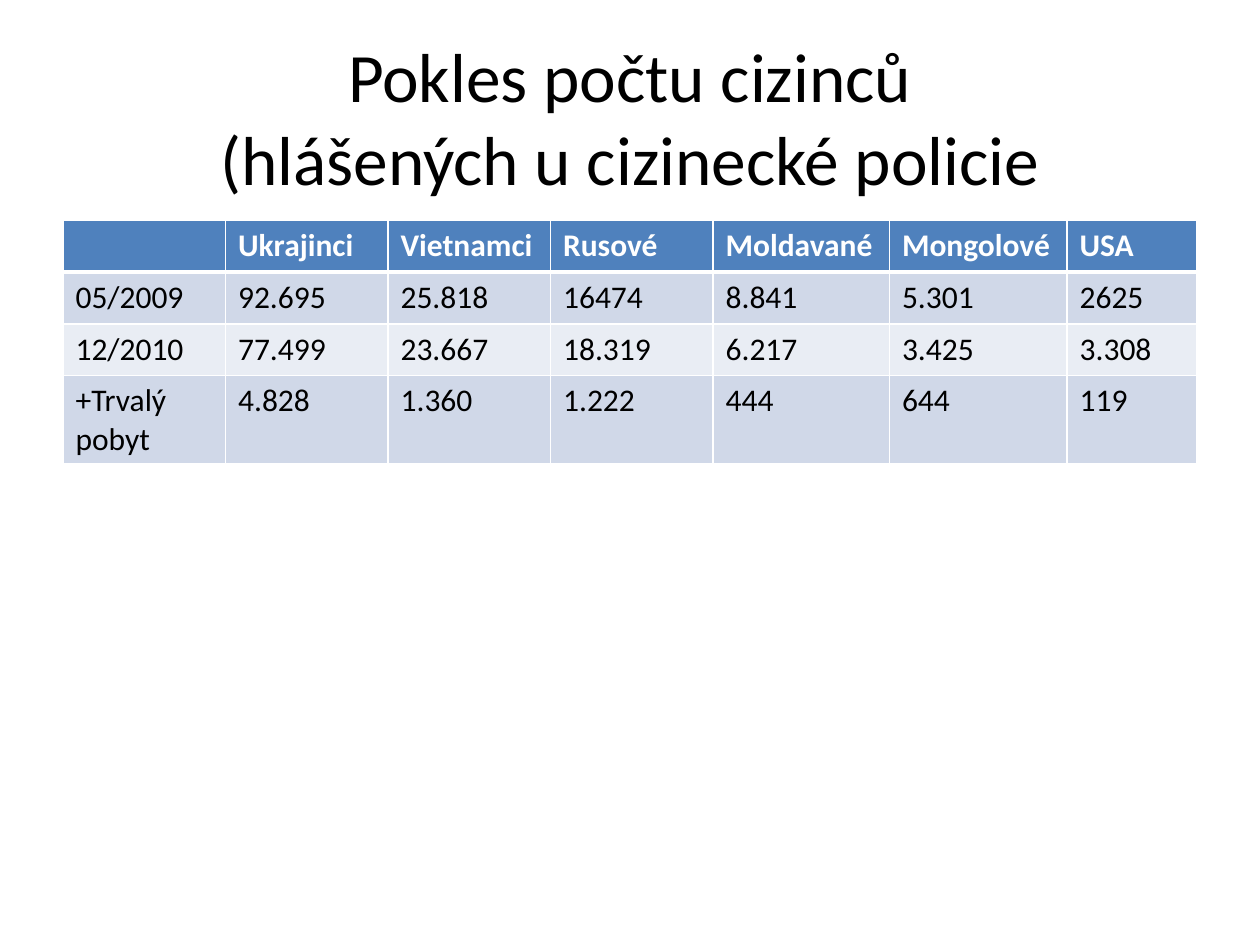
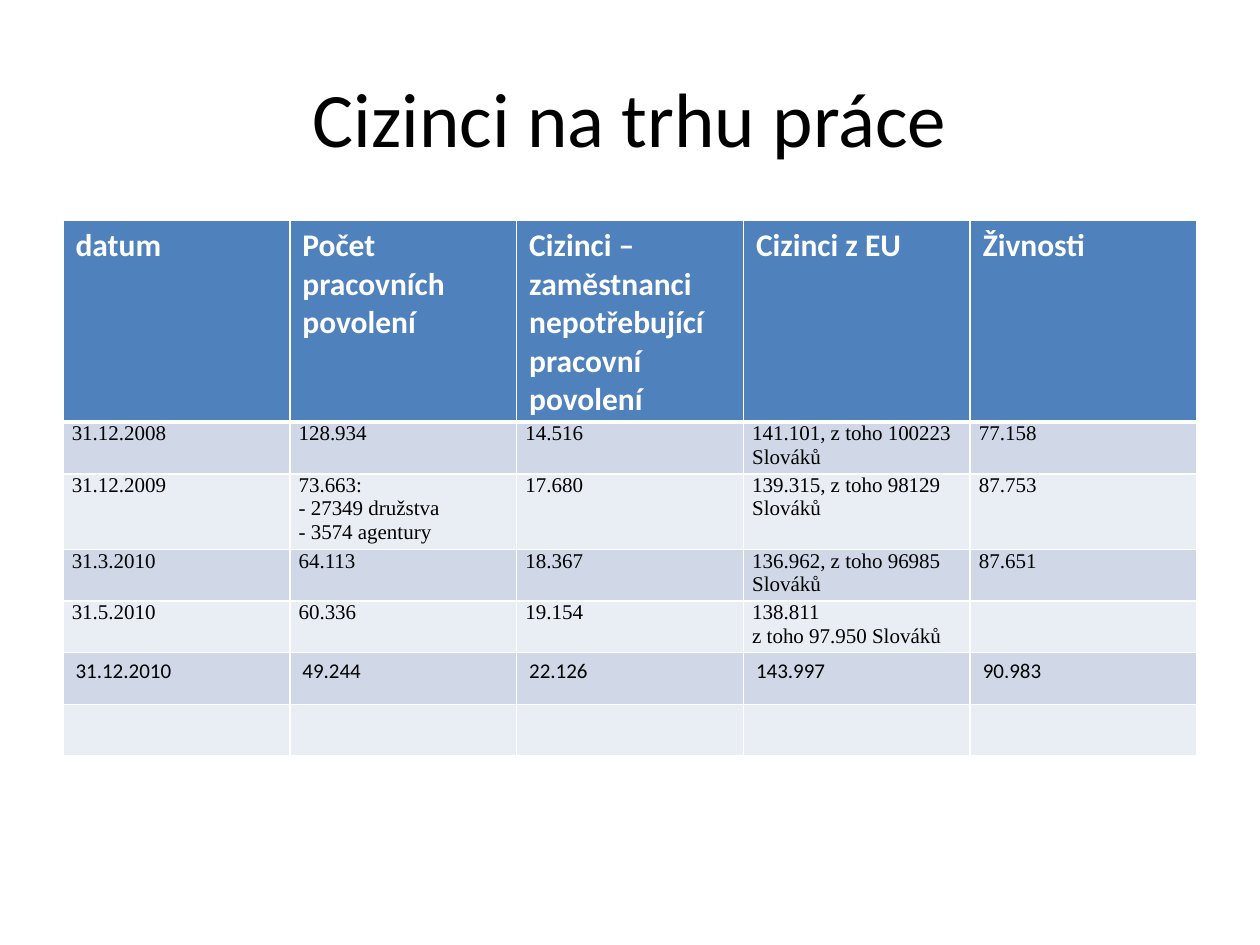
from lxml import etree
from pptx import Presentation
from pptx import util as u
from pptx.dml.color import RGBColor
from pptx.enum import text
from pptx.oxml import ns

BLACK = RGBColor(0x00, 0x00, 0x00)
WHITE = RGBColor(0xFF, 0xFF, 0xFF)
BLUE = RGBColor(0x4F, 0x81, 0xBD)
BANDS = (RGBColor(0xD0, 0xD8, 0xE8), RGBColor(0xE9, 0xED, 0xF4))

TITLE = (0.5, 0.3, 9, 1.25)
GRID = (0.5, 1.75)
ROW = 0.41

HEAD = dict(name="Calibri", size=u.Pt(18), bold=True)
BODY = dict(name="Calibri", size=u.Pt(18), bold=False)
SMALL = dict(BODY, size=u.Pt(12))
SERIF = dict(SMALL, name="Times New Roman")
TIGHT = dict(margin_left=u.Inches(0.07), margin_right=u.Inches(0.07),
             margin_top=0, margin_bottom=0)

POLICE = [
    ["", "Ukrajinci", "Vietnamci", "Rusové", "Moldavané", "Mongolové", "USA"],
    ["05/2009", "92.695", "25.818", "16474", "8.841", "5.301", "2625"],
    ["12/2010", "77.499", "23.667", "18.319", "6.217", "3.425", "3.308"],
    ["+Trvalý pobyt", "4.828", "1.360", "1.222", "444", "644", "119"],
]
LABOUR = [
    ["datum", "Počet pracovních povolení",
     "Cizinci – zaměstnanci nepotřebující pracovní povolení",
     "Cizinci z EU", "Živnosti"],
    ["31.12.2008", "128.934", "14.516", "141.101, z toho 100223 Slováků", "77.158"],
    ["31.12.2009", "73.663:\n- 27349 družstva\n- 3574 agentury", "17.680",
     "139.315, z toho 98129 Slováků", "87.753"],
    ["31.3.2010", "64.113", "18.367", "136.962, z toho 96985 Slováků", "87.651"],
    ["31.5.2010", "60.336", "19.154", "138.811\nz toho 97.950 Slováků", ""],
    ["31.12.2010", "49.244", "22.126", "143.997", "90.983"],
    [""] * 5,
]


def apply(item, values):
    for name, value in values.items():
        setattr(item, name, value)


def style(par, font, color):
    for run in par.runs:
        apply(run.font, font)
        run.font.color.rgb = color


def add_title(slide, box, words, size):
    frame = slide.shapes.add_textbox(*map(u.Inches, box)).text_frame
    apply(frame, dict(word_wrap=True, vertical_anchor=text.MSO_ANCHOR.MIDDLE))
    par = frame.paragraphs[0]
    par.text = words
    par.alignment = text.PP_ALIGN.CENTER
    style(par, dict(name="Calibri", size=u.Pt(size)), BLACK)


def add_edges(cell, row):
    """Draw white cell borders, with a thick rule below the header row."""
    widths = dict(L=1, R=1, T=3 if row == 1 else 1, B=3 if row == 0 else 1)
    props = cell._tc.get_or_add_tcPr()
    for side, width in widths.items():
        line = etree.SubElement(props, ns.qn(f"a:ln{side}"), w=str(u.Pt(width)))
        fill = etree.SubElement(line, ns.qn("a:solidFill"))
        etree.SubElement(fill, ns.qn("a:srgbClr"), val=str(WHITE))


def fill_cell(cell, row, words, font, color, back):
    add_edges(cell, row)
    cell.fill.solid()
    cell.fill.fore_color.rgb = back
    cell.text = words
    for par in cell.text_frame.paragraphs:
        style(par, font, color)


def add_grid(slide, spot, widths, data, fonts):
    """Place a banded table; fonts gives the format of each body row."""
    size = (sum(widths), ROW * len(data))
    table = slide.shapes.add_table(
        len(data), len(widths), *map(u.Inches, (*spot, *size))).table
    for col, width in zip(table.columns, widths):
        col.width = u.Inches(width)
    for i, (line, font) in enumerate(zip(data, [HEAD, *fonts])):
        table.rows[i].height = u.Inches(ROW)
        color, back = (BLACK, BANDS[(i - 1) % 2]) if i else (WHITE, BLUE)
        for j, words in enumerate(line):
            cell = table.cell(i, j)
            fill_cell(cell, i, words, font, color, back)
            if font is SERIF and words:
                apply(cell, TIGHT)


def add_page(deck, title, size, widths, data, fonts):
    slide = deck.slides.add_slide(deck.slide_layouts[6])
    add_title(slide, TITLE, title, size)
    add_grid(slide, GRID, widths, data, fonts)


def main():
    deck = Presentation()
    deck.slide_width, deck.slide_height = u.Inches(10), u.Inches(7.5)
    add_page(deck, "Pokles počtu cizinců\n(hlášených u cizinecké policie", 39.6,
             [1.29] * 4 + [1.4, 1.41, 1.03], POLICE, [BODY] * 3)
    add_page(deck, "Cizinci na trhu práce", 44,
             [1.8] * 5, LABOUR, [SERIF] * 4 + [SMALL] * 2)
    deck.save("out.pptx")


if __name__ == "__main__":
    main()
